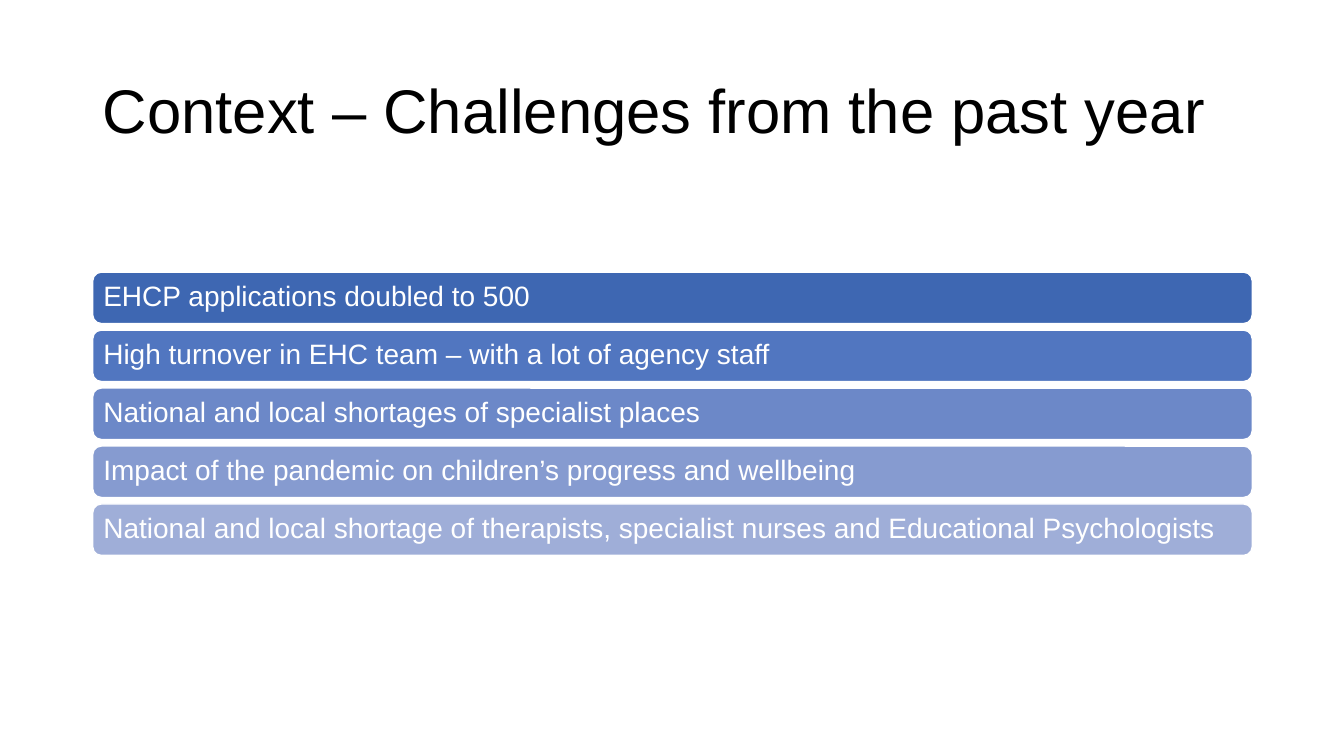
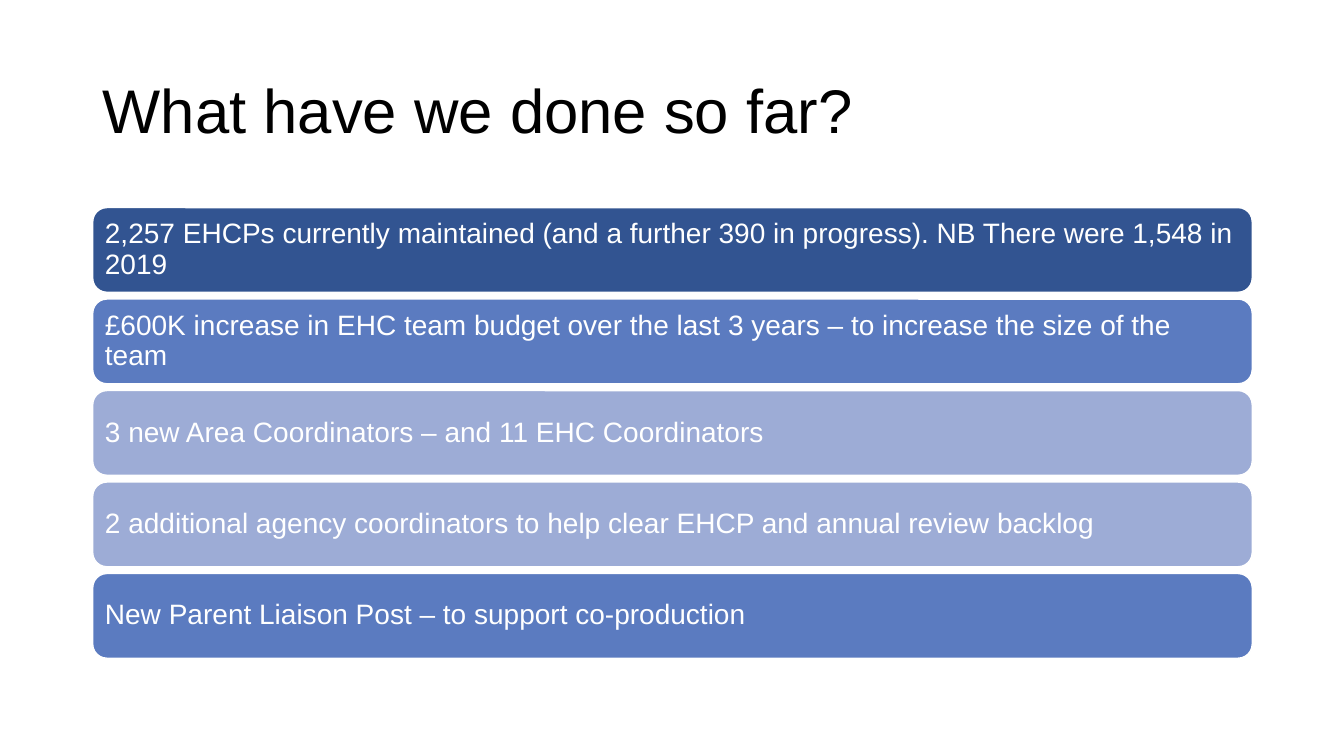
from pptx import Presentation
from pptx.dml.color import RGBColor
from pptx.enum.shapes import MSO_SHAPE as Shape
from pptx.enum.text import MSO_ANCHOR as Anchor, MSO_AUTO_SIZE as Fit, PP_ALIGN as Align
from pptx.util import Inches, Pt

FONT = "Arial"
BLACK, WHITE = "000000", "FFFFFF"
LEFT, WIDTH = Inches(0.92), Inches(11.5)


def rgb(code):
    return RGBColor.from_string(code)


def write(shape, text, size, color, pad=None):
    """Fill the shape with one left-aligned, vertically centred paragraph."""
    frame = shape.text_frame
    frame.word_wrap = True
    frame.auto_size = Fit.NONE
    frame.vertical_anchor = Anchor.MIDDLE
    if pad is not None:
        frame.margin_left = frame.margin_right = pad
        frame.margin_top = frame.margin_bottom = pad
    para = frame.paragraphs[0]
    para.alignment = Align.LEFT
    para.line_spacing = 0.9
    run = para.add_run()
    run.text = text
    run.font.name = FONT
    run.font.size = Pt(size)
    run.font.color.rgb = rgb(color)


# title, top of first bar, top of last bar, bar height, bars
pages = [
    ("Context – Challenges from the past year", 2.7, 5, 0.51, [
        ("EHCP applications doubled to 500", "3E67B2"),
        ("High turnover in EHC team – with a lot of agency staff", "5176C0"),
        ("National and local shortages of specialist places", "6C88C8"),
        ("Impact of the pandemic on children’s progress and wellbeing", "869BD0"),
        ("National and local shortage of therapists, specialist nurses "
         "and Educational Psychologists", "9FAED8"),
    ]),
    ("What have we done so far?", 2.06, 5.69, 0.84, [
        ("2,257 EHCPs currently maintained (and a further 390 in progress). "
         "NB There were 1,548 in 2019", "325491"),
        ("£600K increase in EHC team budget over the last 3 years – "
         "to increase the size of the team", "5B7BC0"),
        ("3 new Area Coordinators – and 11 EHC Coordinators", "9DACD6"),
        ("2 additional agency coordinators to help clear EHCP "
         "and annual review backlog", "9DACD6"),
        ("New Parent Liaison Post – to support co-production", "5B7BC0"),
    ]),
]

deck = Presentation()
deck.slide_width, deck.slide_height = Inches(13.33), Inches(7.5)
layout = deck.slide_layouts.get_by_name("Title Only")

for heading, first, last, height, bars in pages:
    slide = deck.slides.add_slide(layout)
    title = slide.shapes.title
    title.left, title.top = LEFT, Inches(0.4)
    title.width, title.height = WIDTH, Inches(1.45)
    write(title, heading, size=44, color=BLACK)

    step = (last - first) / (len(bars) - 1)
    for row, (text, fill) in enumerate(bars):
        bar = slide.shapes.add_shape(
            Shape.ROUNDED_RECTANGLE,
            LEFT, Inches(first + row * step), WIDTH, Inches(height))
        bar.shadow.inherit = False
        bar.fill.solid()
        bar.fill.fore_color.rgb = rgb(fill)
        bar.line.color.rgb = rgb(WHITE)
        bar.line.width = Pt(1)
        write(bar, text, size=20, color=WHITE, pad=Inches(0.08))

deck.save("out.pptx")
